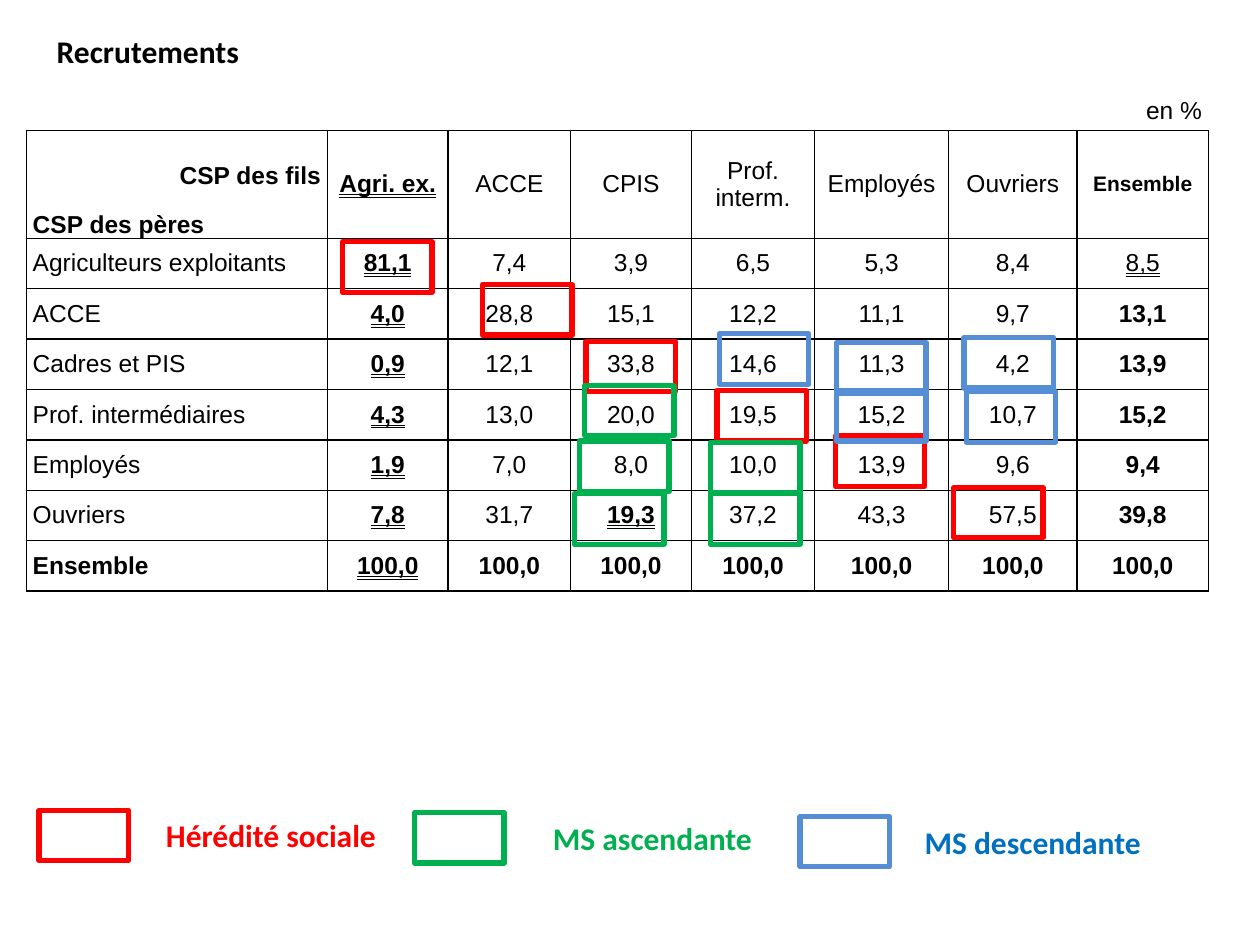
import pptx
import pptx.dml.color
import pptx.enum.shapes
import pptx.enum.text
import pptx.oxml
import pptx.oxml.ns
import pptx.util

Pt = pptx.util.Pt
ALIGN = pptx.enum.text.PP_ALIGN
ANCHOR = pptx.enum.text.MSO_ANCHOR
DOUBLE = pptx.enum.text.MSO_UNDERLINE.DOUBLE_LINE

# Content
TITLE = "Recrutements"
UNIT = "en %"
CORNER = [("CSP des fils", ALIGN.RIGHT, 12), ("CSP des pères", ALIGN.LEFT, 3)]
HEADERS = ["Agri. ex.", "ACCE", "CPIS", "Prof. interm.", "Employés", "Ouvriers", "Ensemble"]
ROWS = [
    ("Agriculteurs exploitants", "81,1 7,4 3,9 6,5 5,3 8,4 8,5"),
    ("ACCE", "4,0 28,8 15,1 12,2 11,1 9,7 13,1"),
    ("Cadres et PIS", "0,9 12,1 33,8 14,6 11,3 4,2 13,9"),
    ("Prof. intermédiaires", "4,3 13,0 20,0 19,5 15,2 10,7 15,2"),
    ("Employés", "1,9 7,0 8,0 10,0 13,9 9,6 9,4"),
    ("Ouvriers", "7,8 31,7 19,3 37,2 43,3 57,5 39,8"),
    ("Ensemble", "100,0 100,0 100,0 100,0 100,0 100,0 100,0"),
]
# Each group: frame colour, text colour, label, label box, frame corners (last is the key)
GROUPS = [
    ("FF0000", "FF0000", "Hérédité sociale", (87.8, 463, 198.7),
     [(195.8, 138.2), (275.8, 162.7), (334.8, 195.1), (409.7, 223.2),
      (477.4, 249.1), (545, 278.6), (22.3, 463)]),
    ("00B050", "00B050", "MS ascendante", (308.9, 464.4, 137.5),
     [(406.1, 252.7), (406.1, 282.2), (331.2, 252), (334.1, 220.3),
      (328.3, 282.2), (236.9, 464.4)]),
    ("558ED5", "0070C0", "MS descendante", (521.3, 466.6, 172.8),
     [(478.1, 195.8), (478.1, 223.2), (552.2, 223.9), (550.8, 193),
      (411.1, 190.8), (457.2, 466.6)]),
]

# Layout
COLS = [172, 69, 70, 69, 70.5, 76.5, 73.5, 75]
HEIGHTS = [22.7, 61.7] + [28.8] * len(ROWS)
TABLE_AT = (15.1, 51.8)
FRAME = (51.1, 28.8)
LAST = len(COLS) - 1
TOTAL_ROW = len(HEIGHTS) - 1


def rgb(value):
    return pptx.dml.color.RGBColor.from_string(value)


def write(p, text, color="000000", **fmt):
    r = p.add_run()
    r.text = text
    r.font.color.rgb = rgb(color)
    for name, value in ({"name": "Arial", "size": Pt(14), "bold": False} | fmt).items():
        setattr(r.font, name, value)


def set_borders(cell, sides):
    tcPr = cell._tc.get_or_add_tcPr()
    for side in "LRTB":
        fill = ('<a:solidFill><a:srgbClr val="000000"/></a:solidFill>'
                if side in sides else "<a:noFill/>")
        tcPr.append(pptx.oxml.parse_xml(
            f'<a:ln{side} {pptx.oxml.ns.nsdecls("a")} w="12700">{fill}</a:ln{side}>'))


def cell_format(row, col):
    """Bold totals and first class; double underline on the first class and two figures."""
    fmt = {"bold": col == 1 or row == TOTAL_ROW or (row, col) == (7, 3)
           or (col == LAST and row != 2)}
    if col == 1 or (row, col) in [(2, LAST), (7, 3)]:
        fmt["underline"] = DOUBLE
    if (row, col) == (1, LAST):
        fmt["size"] = Pt(12)
    return fmt


def add_table(s):
    shape = s.shapes.add_table(len(HEIGHTS), len(COLS), *map(Pt, TABLE_AT),
                               Pt(sum(COLS)), Pt(sum(HEIGHTS)))
    table = shape.table
    table.first_row = table.horz_banding = False
    for column, width in zip(table.columns, COLS):
        column.width = Pt(width)
    for row, height in zip(table.rows, HEIGHTS):
        row.height = Pt(height)

    margins = {"margin_left": Pt(3.6), "margin_right": Pt(3.6), "margin_top": 0,
               "margin_bottom": 0, "vertical_anchor": ANCHOR.MIDDLE}
    for i in range(len(HEIGHTS)):
        for j in range(len(COLS)):
            cell = table.cell(i, j)
            for name, value in margins.items():
                setattr(cell, name, value)
            set_borders(cell, "LRTB" if i else "B")
            cell.fill.background()

    # Unit row and corner cell
    table.cell(0, 0).merge(table.cell(0, LAST))
    p = table.cell(0, 0).text_frame.paragraphs[0]
    p.alignment = ALIGN.RIGHT
    write(p, UNIT)
    corner = table.cell(1, 0)
    corner.vertical_anchor = ANCHOR.BOTTOM
    for k, (text, align, after) in enumerate(CORNER):
        tf = corner.text_frame
        p = tf.add_paragraph() if k else tf.paragraphs[0]
        p.alignment, p.space_after = align, Pt(after)
        write(p, text, bold=True)

    # Headers and figures
    grid = [["", *HEADERS]] + [[label, *values.split()] for label, values in ROWS]
    for i, line in enumerate(grid, start=1):
        for j, text in enumerate(line):
            if text:
                p = table.cell(i, j).text_frame.paragraphs[0]
                p.alignment = ALIGN.CENTER if j else ALIGN.LEFT
                write(p, text, **cell_format(i, j))


def fill_label(shape, box, text, color="000000"):
    shape.left, shape.top, shape.width, shape.height = map(Pt, (*box, 28.8))
    tf = shape.text_frame
    tf.word_wrap = True
    tf.vertical_anchor = ANCHOR.TOP
    p = tf.paragraphs[0]
    p.alignment = ALIGN.LEFT
    write(p, text, color, name="Calibri", size=Pt(18), bold=True)


def add_frame(s, corner, color):
    sp = s.shapes.add_shape(pptx.enum.shapes.MSO_SHAPE.RECTANGLE, *map(Pt, corner + FRAME))
    sp.shadow.inherit = False
    sp.fill.background()
    sp.line.color.rgb = rgb(color)
    sp.line.width = Pt(3)


def main():
    prs = pptx.Presentation()
    prs.slide_width, prs.slide_height = Pt(720), Pt(540)
    s = prs.slides.add_slide(prs.slide_layouts[5])
    fill_label(s.shapes.title, (25.2, 14.4, 238.3), TITLE)
    add_table(s)
    # Mobility frames and their key
    for frame_color, text_color, label, box, corners in GROUPS:
        for corner in corners:
            add_frame(s, corner, frame_color)
        fill_label(s.shapes.add_textbox(0, 0, 0, 0), box, label, text_color)
    prs.save("out.pptx")


if __name__ == "__main__":
    main()
